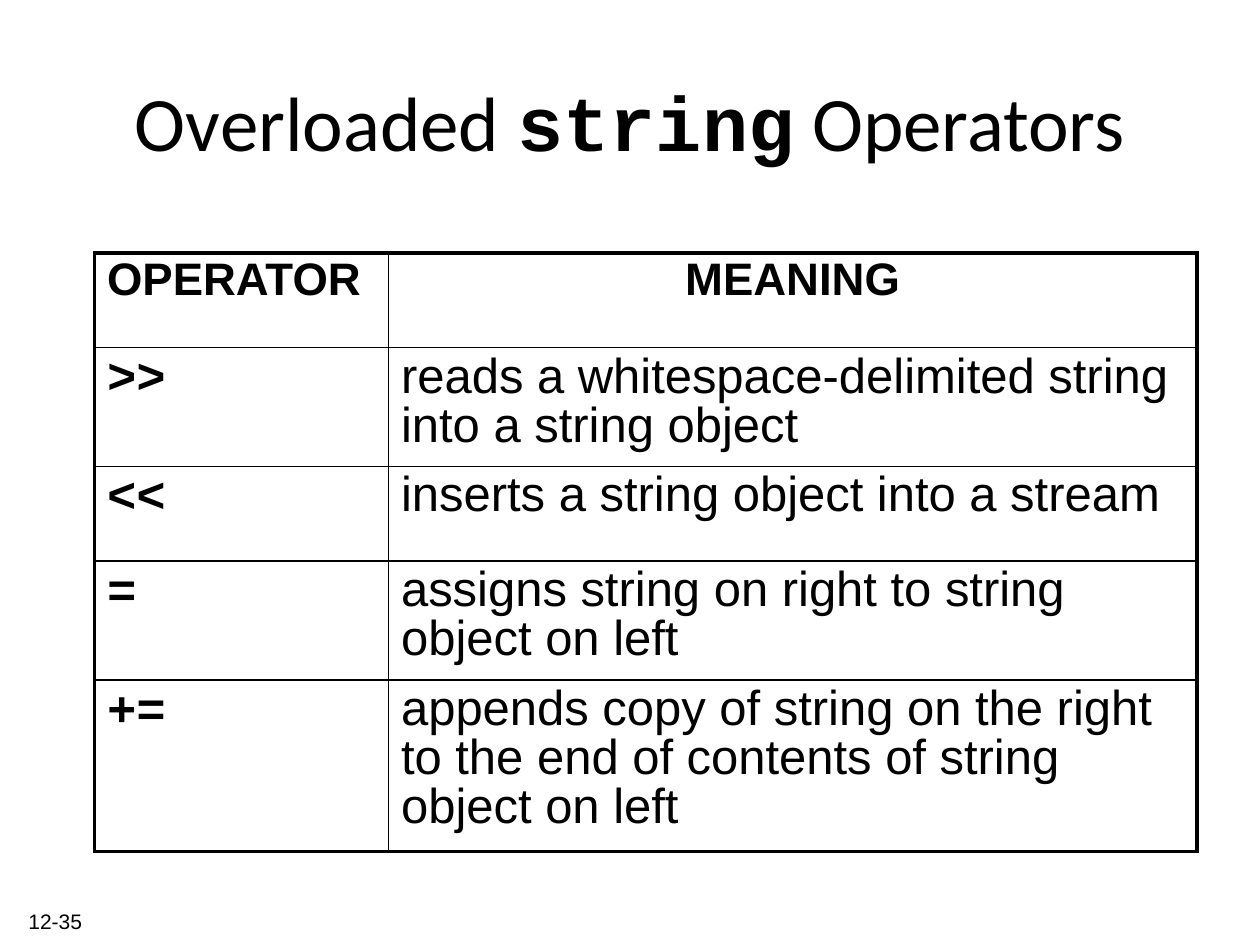
from dataclasses import dataclass, field

from lxml.etree import SubElement
from pptx import Presentation
from pptx.dml.color import RGBColor as RGB
from pptx.enum.text import MSO_ANCHOR as Anchor, PP_ALIGN as Align
from pptx.oxml.ns import qn
from pptx.slide import Slide
from pptx.util import Pt

COLORS = {"ink": "000000", "paper": "FFFFFF"}
THICK, THIN = 2.25, 1
OPERATORS = [
    (">>", "reads a whitespace-delimited string into a string object"),
    ("<<", "inserts a string object into a stream"),
    ("=", "assigns string on right to string object on left"),
    ("+=", "appends copy of string on the right to the end of contents of string object on left"),
]
COLUMN_WIDTHS = [168, 462]
ROW_HEIGHTS = [54, 68, 54, 68, 68]


@dataclass
class Deck:
    slide: Slide
    formats: dict = field(default_factory=lambda: {
        "title": {"name": "Calibri", "size": Pt(44), "bold": False},
        "title_code": {"name": "Courier New", "size": Pt(44), "bold": True},
        "heading": {"name": "Arial", "size": Pt(26), "bold": True},
        "operator": {"name": "Courier New", "size": Pt(28), "bold": True},
        "meaning": {"name": "Arial", "size": Pt(28), "bold": False},
        "page": {"name": "Arial", "size": Pt(12), "bold": False},
    })

    def styled_run(self, paragraph, text, style):
        run = paragraph.add_run()
        run.text = text
        for attribute, value in self.formats[style].items():
            setattr(run.font, attribute, value)
        run.font.color.rgb = RGB.from_string(COLORS["ink"])

    def text(self, bounds, pieces, align):
        frame = self.slide.shapes.add_textbox(*map(Pt, bounds)).text_frame
        frame.word_wrap = True
        frame.vertical_anchor = Anchor.MIDDLE
        frame.paragraphs[0].alignment = align
        for text, style in pieces:
            self.styled_run(frame.paragraphs[0], text, style)

    def borders(self, cell, widths):
        properties = cell._tc.get_or_add_tcPr()
        for position, (side, width) in enumerate(widths.items()):
            line = SubElement(properties, qn(f"a:ln{side}"), w=str(Pt(width)))
            fill = SubElement(line, qn("a:solidFill"))
            SubElement(fill, qn("a:srgbClr"), val=COLORS["ink"])
            properties.insert(position, line)

    def cell(self, cell, text, style, align):
        cell.fill.solid()
        cell.fill.fore_color.rgb = RGB.from_string(COLORS["paper"])
        paragraph = cell.text_frame.paragraphs[0]
        paragraph.alignment = align
        paragraph.line_spacing = 0.9
        before = SubElement(paragraph._p.get_or_add_pPr(), qn("a:spcBef"))
        SubElement(before, qn("a:spcPct"), val="20000")
        self.styled_run(paragraph, text, style)

    def table(self, bounds, rows, widths, heights):
        table = self.slide.shapes.add_table(len(rows), len(widths), *map(Pt, bounds)).table
        table.first_row = table.horz_banding = False
        for column, width in zip(table.columns, widths):
            column.width = Pt(width)
        for row, height in zip(table.rows, heights):
            row.height = Pt(height)
        last_row, last_column = len(rows) - 1, len(widths) - 1
        for r, entries in enumerate(rows):
            for c, (text, style, align) in enumerate(entries):
                cell = table.cell(r, c)
                self.cell(cell, text, style, align)
                outer = {"L": c == 0, "R": c == last_column, "T": r == 0, "B": r == last_row}
                self.borders(cell, {side: THICK if edge else THIN for side, edge in outer.items()})


def main():
    presentation = Presentation()
    presentation.slide_width, presentation.slide_height = Pt(720), Pt(540)
    deck = Deck(presentation.slides.add_slide(presentation.slide_layouts[6]))
    deck.text((30, 24, 660, 90), [
        ("Overloaded ", "title"), ("string", "title_code"), (" Operators", "title"),
    ], Align.CENTER)
    headings = [("OPERATOR", "heading", Align.LEFT), ("MEANING", "heading", Align.CENTER)]
    entries = [
        [(operator, "operator", Align.LEFT), (meaning, "meaning", Align.LEFT)]
        for operator, meaning in OPERATORS
    ]
    deck.table((54, 144.5, 630, 341), [headings] + entries, COLUMN_WIDTHS, ROW_HEIGHTS)
    deck.text((-114, 512, 168, 29), [("12-35", "page")], Align.RIGHT)
    presentation.save("out.pptx")


if __name__ == "__main__":
    main()
